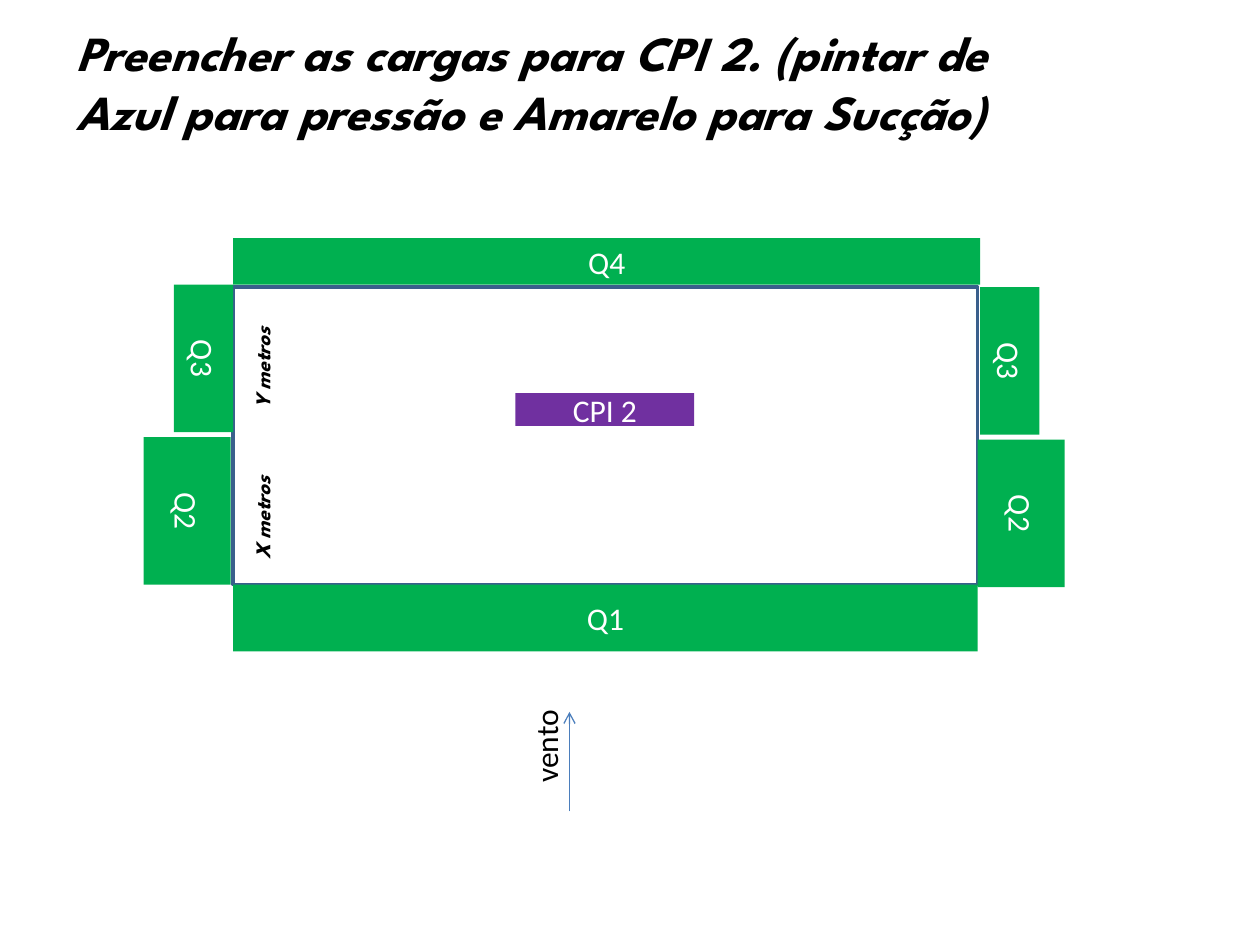
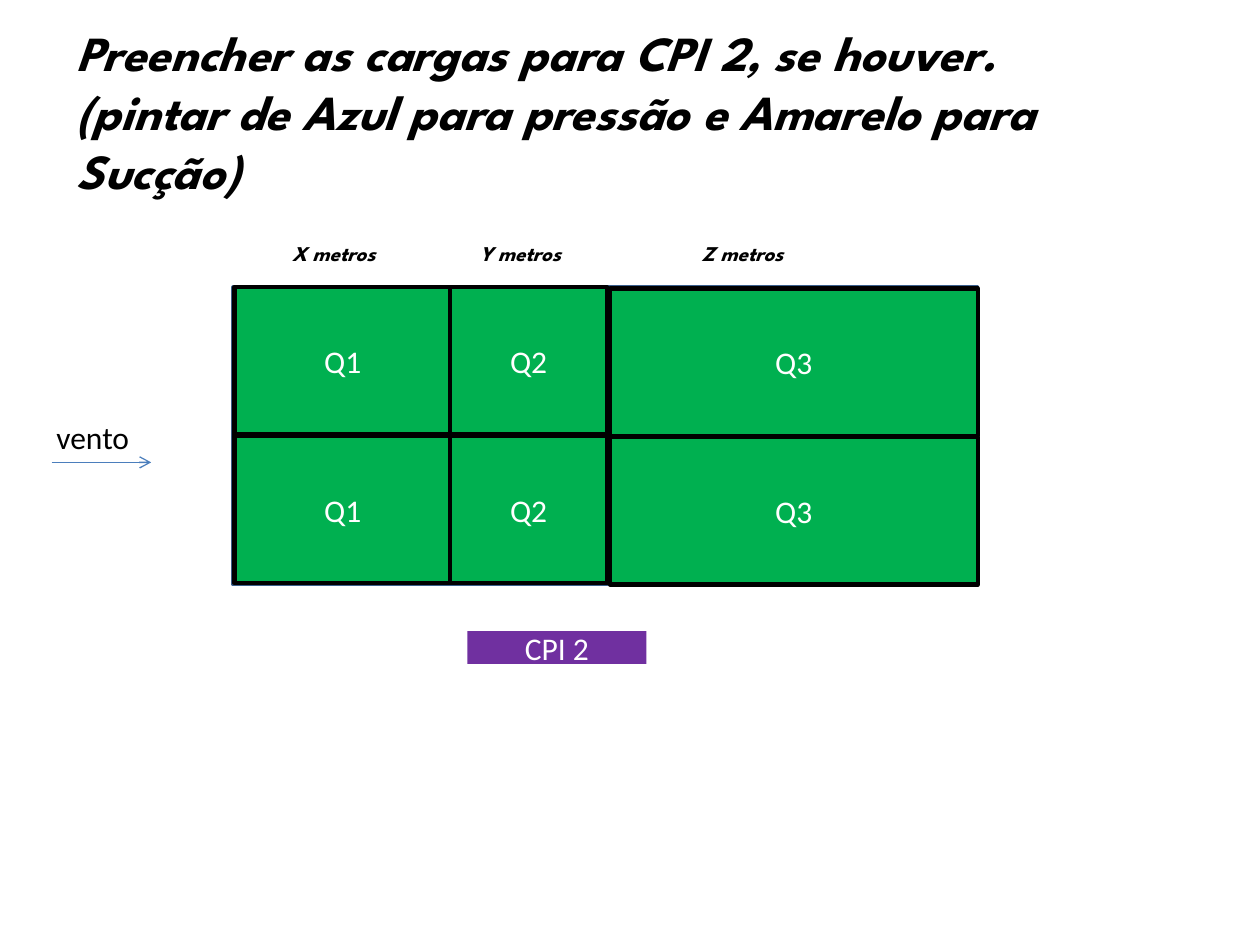
from pptx import Presentation
from pptx.dml.color import RGBColor
from pptx.enum.shapes import MSO_CONNECTOR, MSO_SHAPE
from pptx.enum.text import MSO_ANCHOR, MSO_AUTO_SIZE, PP_ALIGN
from pptx.oxml.ns import qn
from pptx.util import Inches, Pt
from lxml.etree import SubElement

BLACK = RGBColor(0x00, 0x00, 0x00)
WHITE = RGBColor(0xFF, 0xFF, 0xFF)
GREEN = RGBColor(0x00, 0xB0, 0x50)
PURPLE = RGBColor(0x70, 0x30, 0xA0)
OUTLINE_BLUE = RGBColor(0x3A, 0x5F, 0x8C)
ARROW_BLUE = RGBColor(0x4B, 0x7E, 0xBC)

TITLE_FONT = dict(name="League Spartan", size=Pt(28), bold=True, italic=True)
DIMENSION_FONT = dict(TITLE_FONT, size=Pt(12))
BODY_FONT = dict(name="Calibri", size=Pt(18))

TITLE_BOX = (0.51, 0.13, 8.11, 1.51)
PLAN_BOX = (1.85, 2.28, 5.91, 2.36)
TITLE_ONLY_LAYOUT = 5


def write(shape, text, font, color, alignment, anchor):
    """Put one formatted paragraph in a shape."""
    frame = shape.text_frame
    frame_format = dict(word_wrap=True, auto_size=MSO_AUTO_SIZE.NONE,
                        vertical_anchor=anchor)
    for name, value in frame_format.items():
        setattr(frame, name, value)
    paragraph = frame.paragraphs[0]
    paragraph.alignment = alignment
    run = paragraph.add_run()
    run.text = text
    for name, value in font.items():
        setattr(run.font, name, value)
    run.font.color.rgb = color


def add_block(slide, box, text="", fill=None, line=None, line_width=0,
              vertical=False):
    """Add a rectangle with centred text, read downwards if vertical."""
    shape = slide.shapes.add_shape(MSO_SHAPE.RECTANGLE, *map(Inches, box))
    shape.shadow.inherit = False
    if fill is None:
        shape.fill.background()
    else:
        shape.fill.solid()
        shape.fill.fore_color.rgb = fill
    if line is None:
        shape.line.fill.background()
    else:
        shape.line.color.rgb = line
        shape.line.width = Pt(line_width)
    if text:
        write(shape, text, BODY_FONT, WHITE, PP_ALIGN.CENTER, MSO_ANCHOR.MIDDLE)
    if vertical:
        shape.text_frame._txBody.bodyPr.set("vert", "vert")
    return shape


def add_label(slide, box, text, font, rotation=0):
    label = slide.shapes.add_textbox(*map(Inches, box))
    label.rotation = rotation
    write(label, text, font, BLACK, PP_ALIGN.LEFT, MSO_ANCHOR.TOP)


def add_wind(slide, start, end, label_box, rotation=0):
    """Add the wind arrow and its label."""
    arrow = slide.shapes.add_connector(MSO_CONNECTOR.STRAIGHT,
                                       *map(Inches, start + end))
    arrow.line.color.rgb = ARROW_BLUE
    arrow.line.width = Pt(0.75)
    SubElement(arrow.line._get_or_add_ln(), qn("a:tailEnd"), type="arrow")
    SubElement(arrow._element.spPr, qn("a:effectLst"))
    add_label(slide, label_box, "vento", BODY_FONT, rotation)


def add_pressure_tag(slide, left, top):
    tag = add_block(slide, (left, top, 1.42, 0.26), "CPI 2", PURPLE)
    tag.text_frame.margin_top = tag.text_frame.margin_bottom = 0


def add_titled_slide(presentation, text):
    """Add a slide with its title and the outline of the building."""
    layout = presentation.slide_layouts[TITLE_ONLY_LAYOUT]
    slide = presentation.slides.add_slide(layout)
    title = slide.shapes.title
    for name, value in zip(("left", "top", "width", "height"), TITLE_BOX):
        setattr(title, name, Inches(value))
    write(title, text, TITLE_FONT, BLACK, PP_ALIGN.LEFT, MSO_ANCHOR.TOP)
    add_block(slide, PLAN_BOX, line=OUTLINE_BLUE, line_width=2)
    return slide


def add_wall_loads(slide, box):
    """Place the wall loads around the building plan."""
    left, top, width, height = box
    right, bottom, wall_height = left + width, top + height, 1.17

    # Windward and leeward walls
    add_block(slide, (left, top - 0.39, width + 0.02, 0.37), "Q4", GREEN)
    add_block(slide, (left, bottom, width, 0.53), "Q1", GREEN)

    # Side walls
    side_walls = [
        ("Q2", left - 0.71, top + 1.19, 0.69),
        ("Q3", left - 0.47, top - 0.02, 0.47),
        ("Q2", right, top + 1.21, 0.69),
        ("Q3", right + 0.02, top, 0.47),
    ]
    for text, wall_left, wall_top, depth in side_walls:
        add_block(slide, (wall_left, wall_top, depth, wall_height), text,
                  GREEN, vertical=True)

    # Dimensions along the side
    for text, offset in (("X metros", 1.62), ("Y metros", 0.42)):
        add_label(slide, (left - 0.26, top + offset, 0.98, 0.3), text,
                  DIMENSION_FONT, rotation=270)

    add_pressure_tag(slide, left + 2.24, top + 0.84)


def add_roof_loads(slide, box):
    """Place the two rows of roof zones over the building plan."""
    left, top, _, _ = box
    row_step, zone_height = 1.18, 1.17
    # Zone, dimension, left, drop, width, label left
    zones = [
        ("Q1", "X metros", 0.01, 0, 1.72, 0.37),
        ("Q2", "Y metros", 1.72, 0, 1.25, 1.86),
        ("Q3", "Z metros", 2.99, 0.01, 2.92, 3.62),
    ]
    for text, dimension, offset, drop, width, label_offset in zones:
        for row in (1, 0):
            zone_top = top + drop + row * row_step
            add_block(slide, (left + offset, zone_top, width, zone_height),
                      text, GREEN, BLACK, 2.5)
        add_label(slide, (left + label_offset, top - 0.42, 0.98, 0.3),
                  dimension, DIMENSION_FONT)

    add_pressure_tag(slide, left + 1.86, top + 2.73)


def main():
    presentation = Presentation()
    presentation.slide_width = Inches(10)
    presentation.slide_height = Inches(7.5)

    # Walls
    slide = add_titled_slide(
        presentation, "Preencher as cargas para CPI 2. "
        "(pintar de Azul para pressão e Amarelo para Sucção)")
    add_wall_loads(slide, PLAN_BOX)
    add_wind(slide, (4.52, 6.44), (4.52, 5.65), (3.86, 5.64, 0.94, 0.4), 270)

    # Roof
    slide = add_titled_slide(
        presentation, "Preencher as cargas para CPI 2, se houver. "
        "(pintar de Azul para pressão e Amarelo para Sucção)")
    add_roof_loads(slide, PLAN_BOX)
    add_wind(slide, (0.41, 3.67), (1.2, 3.67), (0.35, 3.27, 0.94, 0.4))

    presentation.save("out.pptx")


if __name__ == "__main__":
    main()
